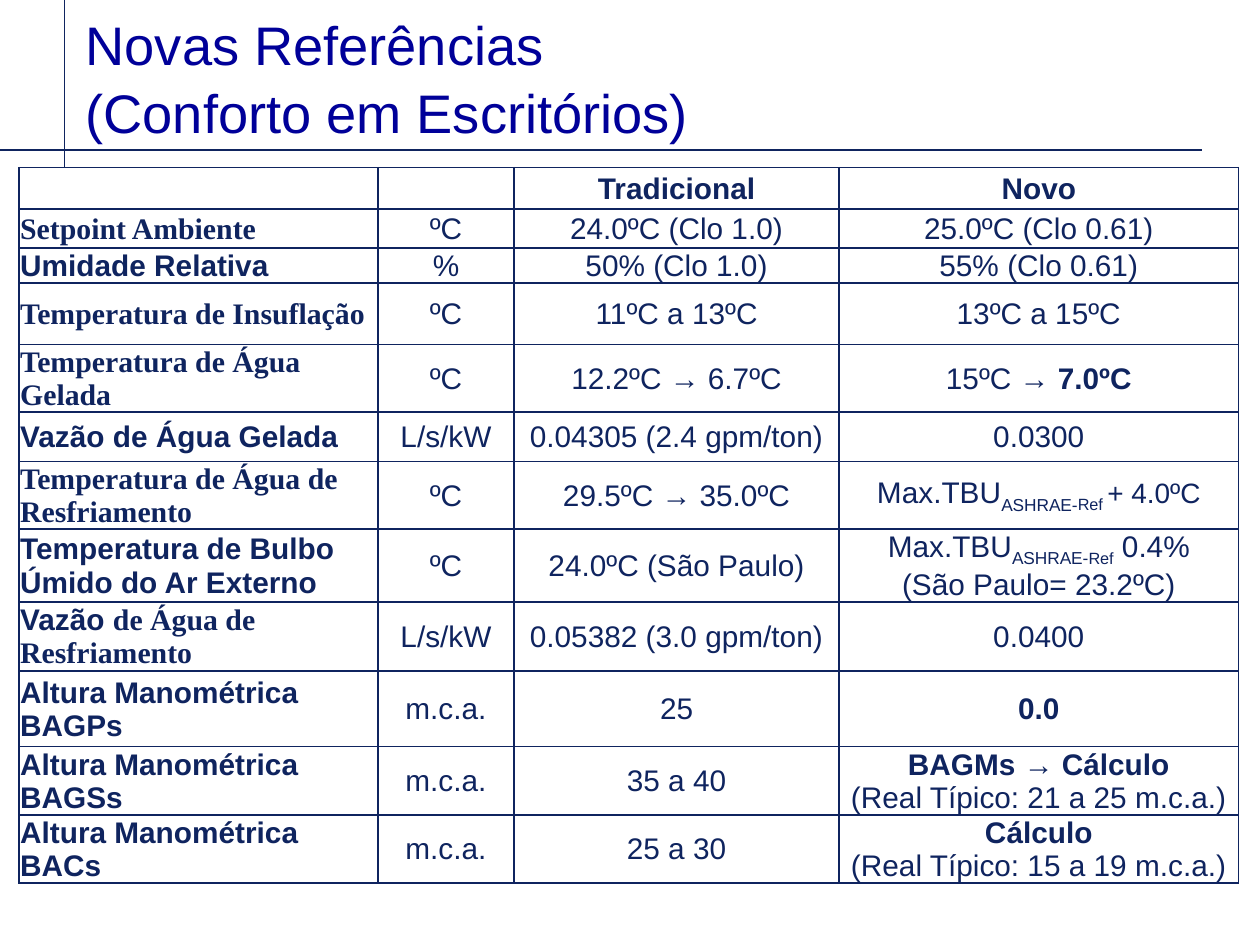
from lxml.etree import SubElement
from pptx import Presentation
from pptx.dml.color import RGBColor
from pptx.enum.shapes import MSO_CONNECTOR
from pptx.enum.text import MSO_ANCHOR, MSO_AUTO_SIZE, PP_ALIGN
from pptx.oxml.ns import qn
from pptx.util import Inches, Pt

NAVY, BLUE, WHITE = "0F245F", "000099", "FFFFFF"
SANS, SERIF = "Arial", "Times New Roman"

TITLE = ["Novas Referências", "(Conforto em Escritórios)"]
RULES = [(0.51, 6.62, 0.51, 0), (0, 1.19, 9.54, 1.19)]

# Run styles: font, size, bold, baseline in thousandths of a percent
STYLES = {
    "plain": (SANS, 17, False, 0),
    "bold": (SANS, 17, True, 0),
    "serif": (SERIF, 17, True, 0),
    "small": (SANS, 16, False, 0),
    "sub": (SANS, 17, False, -25000),
    "small sub": (SANS, 16, False, -25000),
}

# A cell is a list of paragraphs, a paragraph a list of (text, style) runs
def para(text, style="plain"):
    return [(text, style)]


def label(*lines, style="bold"):
    return [para(line, style) for line in lines]


def plain(text):
    return [para(text)]


MAX_TBU = [("Max.TBU", "plain"), ("ASHRAE-", "sub")]
COLS = [2.85, 1.08, 2.58, 3.17]
# Row height, then the four cells
ROWS = [
    (0.33, [], [], label("Tradicional"), label("Novo")),
    (0.31, label("Setpoint Ambiente", style="serif"), plain("ºC"),
     plain("24.0ºC (Clo 1.0)"), plain("25.0ºC (Clo 0.61)")),
    (0.23, label("Umidade Relativa"), plain("%"),
     plain("50% (Clo 1.0)"), plain("55% (Clo 0.61)")),
    (0.49, label("Temperatura de Insuflação", style="serif"), plain("ºC"),
     plain("11ºC a 13ºC"), plain("13ºC a 15ºC")),
    (0.49, label("Temperatura de Água Gelada", style="serif"), plain("ºC"),
     plain("12.2ºC → 6.7ºC"), [[("15ºC → ", "plain"), ("7.0ºC", "bold")]]),
    (0.39, label("Vazão de Água Gelada"), plain("L/s/kW"),
     plain("0.04305 (2.4 gpm/ton)"), plain("0.0300")),
    (0.49, label("Temperatura de Água de Resfriamento", style="serif"), plain("ºC"),
     plain("29.5ºC → 35.0ºC"),
     [MAX_TBU + [("Ref ", "small sub"), ("+ 4.0ºC", "small")]]),
    (0.49, label("Temperatura de Bulbo Úmido do Ar Externo"), plain("ºC"),
     plain("24.0ºC (São Paulo)"),
     [MAX_TBU + [("Ref", "small sub"), (" 0.4%", "plain")],
      para("(São Paulo= 23.2ºC)")]),
    (0.55, [[("Vazão ", "bold"), ("de Água de Resfriamento", "serif")]],
     plain("L/s/kW"), plain("0.05382 (3.0 gpm/ton)"), plain("0.0400")),
    (0.6, label("Altura Manométrica", "BAGPs"), plain("m.c.a."),
     plain("25"), label("0.0")),
    (0.51, label("Altura Manométrica", "BAGSs"), plain("m.c.a."), plain("35 a 40"),
     [para("BAGMs → Cálculo", "bold"), para("(Real Típico: 21 a 25 m.c.a.)")]),
    (0.51, label("Altura Manométrica", "BACs"), plain("m.c.a."), plain("25 a 30"),
     [para("Cálculo", "bold"), para("(Real Típico: 15 a 19 m.c.a.)")]),
]


def rgb(color):
    return RGBColor.from_string(color)


def add_run(p, text, font, size, color, bold=False, baseline=0):
    r = p.add_run()
    r.text = text
    r.font.name, r.font.size, r.font.bold = font, Pt(size), bold
    r.font.color.rgb = rgb(color)
    if baseline:
        r.font._element.set("baseline", str(baseline))


def paragraphs(tf, count):
    return [tf.paragraphs[0] if i == 0 else tf.add_paragraph() for i in range(count)]


def add_title(slide):
    sp = slide.shapes.title
    sp.left, sp.top, sp.width, sp.height = map(Inches, (0.58, 0, 9.22, 1))
    tf = sp.text_frame
    tf.word_wrap, tf.auto_size = True, MSO_AUTO_SIZE.NONE
    tf.vertical_anchor = MSO_ANCHOR.TOP
    tf.margin_top = Inches(0.07)
    for p, text in zip(paragraphs(tf, len(TITLE)), TITLE):
        p.alignment, p.line_spacing, p.space_before = PP_ALIGN.LEFT, 1.04, Pt(0)
        add_run(p, text, SANS, 31, BLUE)


def add_rule(slide, ends):
    line = slide.shapes.add_connector(MSO_CONNECTOR.STRAIGHT, *map(Inches, ends))
    line.line.color.rgb, line.line.width = rgb(NAVY), Pt(0.75)
    SubElement(line._element.spPr, qn("a:effectLst"))


def set_borders(cell):
    tcPr = cell._tc.get_or_add_tcPr()
    for side in ("lnL", "lnR", "lnT", "lnB"):
        ln = SubElement(tcPr, qn(f"a:{side}"), w=str(Pt(1)))
        fill = SubElement(ln, qn("a:solidFill"))
        SubElement(fill, qn("a:srgbClr"), val=NAVY)


def fill_cell(cell, content, align):
    set_borders(cell)
    cell.fill.solid()
    cell.fill.fore_color.rgb = rgb(WHITE)
    cell.vertical_anchor = MSO_ANCHOR.MIDDLE
    cell.margin_left = cell.margin_right = cell.margin_top = Inches(0.01)
    cell.margin_bottom = 0
    for p, runs in zip(paragraphs(cell.text_frame, len(content)), content):
        p.alignment = align
        for text, style in runs:
            font, size, bold, baseline = STYLES[style]
            add_run(p, text, font, size, NAVY, bold, baseline)


def add_reference_table(slide):
    heights = [row[0] for row in ROWS]
    frame = slide.shapes.add_table(len(ROWS), len(COLS), Inches(0.15), Inches(1.33),
                                   Inches(sum(COLS)), Inches(sum(heights)))
    table = frame.table
    table.first_row = table.horz_banding = False
    for col, width in zip(table.columns, COLS):
        col.width = Inches(width)
    for i, (height, *cells) in enumerate(ROWS):
        table.rows[i].height = Inches(height)
        for j, content in enumerate(cells):
            fill_cell(table.cell(i, j), content, PP_ALIGN.CENTER if j else PP_ALIGN.LEFT)


def main():
    prs = Presentation()
    prs.slide_width, prs.slide_height = Inches(10), Inches(7.5)
    slide = prs.slides.add_slide(prs.slide_layouts[5])
    for ends in RULES:
        add_rule(slide, ends)
    add_title(slide)
    add_reference_table(slide)
    prs.save("out.pptx")


if __name__ == "__main__":
    main()
